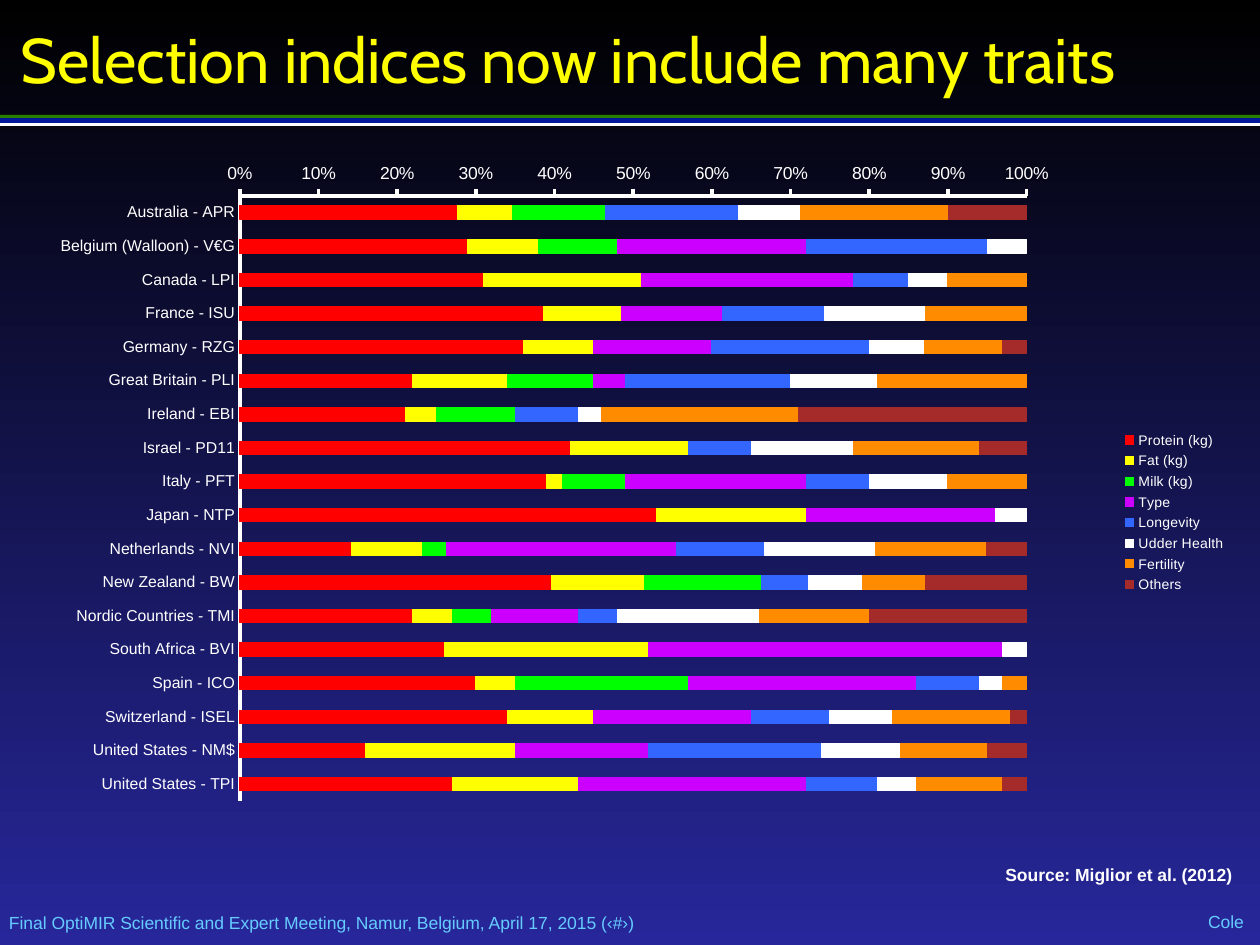
import pptx
import pptx.chart.data
import pptx.dml.color
import pptx.enum.chart
import pptx.enum.shapes
import pptx.enum.text
import pptx.oxml
import pptx.oxml.ns
import pptx.util
from dataclasses import dataclass

TITLE = "Selection indices now include many traits"
SOURCE = "Source: Miglior et al. (2012)"
FOOTER = "Final OptiMIR Scientific and Expert Meeting, Namur, Belgium, April 17, 2015 (‹#›)"
AUTHOR = "Cole"

TRAITS = [
    ("Protein (kg)", "FF0000"),
    ("Fat (kg)", "FFFF00"),
    ("Milk (kg)", "00FF00"),
    ("Type", "CC00FF"),
    ("Longevity", "3366FF"),
    ("Udder Health", "FFFFFF"),
    ("Fertility", "FF8C00"),
    ("Others", "A52A2A"),
]
# Weight of each trait, in the order of TRAITS
INDICES = [
    ("Australia - APR", (28, 7, 12, None, 17, 8, 19, 10)),
    ("Belgium (Walloon) - V€G", (29, 9, 10, 24, 23, 5, None, None)),
    ("Canada - LPI", (31, 20, None, 27, 7, 5, 10, None)),
    ("France - ISU", (39, 10, None, 13, 13, 13, 13, None)),
    ("Germany - RZG", (36, 9, None, 15, 20, 7, 10, 3)),
    ("Great Britain - PLI", (22, 12, 11, 4, 21, 11, 19, None)),
    ("Ireland - EBI", (21, 4, 10, None, 8, 3, 25, 29)),
    ("Israel - PD11", (42, 15, None, None, 8, 13, 16, 6)),
    ("Italy - PFT", (39, 2, 8, 23, 8, 10, 10, None)),
    ("Japan - NTP", (53, 19, None, 24, None, 4, None, None)),
    ("Netherlands - NVI", (14, 9, 3, 29, 11, 14, 14, 5)),
    ("New Zealand - BW", (40, 12, 15, None, 6, 7, 8, 13)),
    ("Nordic Countries - TMI", (22, 5, 5, 11, 5, 18, 14, 20)),
    ("South Africa - BVI", (26, 26, None, 45, None, 3, None, None)),
    ("Spain - ICO", (30, 5, 22, 29, 8, 3, 3, None)),
    ("Switzerland - ISEL", (34, 11, None, 20, 10, 8, 15, 2)),
    ("United States - NM$", (16, 19, None, 17, 22, 10, 11, 5)),
    ("United States - TPI", (27, 16, None, 29, 9, 5, 11, 3)),
]
# top, height, colour of the bands under the title
STRIPES = [(115, 4, "2A7E00"), (122, 4, "FFFFFF"), (118, 5, "001799")]
PLOT_AREA = {"x": 0.2, "y": 0.04, "w": 0.63, "h": 0.88}


@dataclass(frozen=True)
class Theme:
    top: str = "000000"
    bottom: str = "27279B"
    title: str = "FFFF00"
    text: str = "FFFFFF"
    footer: str = "66CCFF"
    heading_font: str = "Cabin"
    body_font: str = "Arial"
    title_size: int = 36
    body_size: int = 10
    category_size: int = 9
    legend_size: int = 8


THEME = Theme()
ALIGN = pptx.enum.text.PP_ALIGN
ANCHOR = pptx.enum.text.MSO_ANCHOR


def px(*lengths):
    """Turn px, at 126 to the inch, into a list of EMU."""
    return [pptx.util.Emu(round(length * 914400 / 126)) for length in lengths]


def rgb(colour):
    return pptx.dml.color.RGBColor.from_string(colour)


def style_font(font, size, colour, name=THEME.body_font, bold=False):
    font.size = pptx.util.Pt(size)
    font.color.rgb = rgb(colour)
    font.name = name
    font.bold = bold


def add_text(slide, box, text, size, colour, name=THEME.body_font, bold=False,
             align=ALIGN.LEFT, anchor=ANCHOR.MIDDLE, inset=0, before=0, wrap=True):
    frame = slide.shapes.add_textbox(*px(*box)).text_frame
    frame.word_wrap = wrap
    frame.vertical_anchor = anchor
    margin, = px(inset)
    frame.margin_left = frame.margin_right = margin
    frame.margin_top = frame.margin_bottom = margin
    paragraph = frame.paragraphs[0]
    paragraph.alignment = align
    paragraph.space_before = pptx.util.Pt(before)
    run = paragraph.add_run()
    run.text = text
    style_font(run.font, size, colour, name, bold)


def paint_background(slide):
    fill = slide.background.fill
    fill.gradient()
    fill.gradient_angle = 270
    for stop, position, colour in zip(fill.gradient_stops, (0, 1), (THEME.top, THEME.bottom)):
        stop.position = position
        stop.color.rgb = rgb(colour)


def add_stripes(slide):
    for top, height, colour in STRIPES:
        stripe = slide.shapes.add_shape(
            pptx.enum.shapes.MSO_SHAPE.RECTANGLE, *px(0, top, 1260, height))
        stripe.shadow.inherit = False
        stripe.fill.solid()
        stripe.fill.fore_color.rgb = rgb(colour)
        stripe.line.fill.background()


def place_plot_area(chart):
    """Fix the inner plot area as fractions of the chart."""
    plot_area = chart._chartSpace.chart.plotArea
    for layout in plot_area.findall(pptx.oxml.ns.qn("c:layout")):
        plot_area.remove(layout)
    parts = "".join(f'<c:{key}Mode val="edge"/>' for key in "xy")
    parts += "".join(f'<c:{key} val="{value}"/>' for key, value in PLOT_AREA.items())
    plot_area.insert(0, pptx.oxml.parse_xml(
        f'<c:layout {pptx.oxml.ns.nsdecls("c")}><c:manualLayout>'
        f'<c:layoutTarget val="inner"/>{parts}</c:manualLayout></c:layout>'))


def style_axis(axis, size, tick):
    axis.has_major_gridlines = False
    axis.major_tick_mark = tick
    axis.minor_tick_mark = pptx.enum.chart.XL_TICK_MARK.NONE
    axis.format.line.color.rgb = rgb(THEME.text)
    axis.format.line.width = pptx.util.Pt(2)
    style_font(axis.tick_labels.font, size, THEME.text)


def add_index_chart(slide):
    data = pptx.chart.data.CategoryChartData()
    data.categories = [name for name, weights in INDICES]
    columns = zip(*(weights for name, weights in INDICES))
    for (trait, colour), values in zip(TRAITS, columns):
        data.add_series(trait, values)
    chart = slide.shapes.add_chart(
        pptx.enum.chart.XL_CHART_TYPE.BAR_STACKED_100, *px(-10, 164, 1249, 692), data).chart
    chart.has_title = False
    style_font(chart.font, THEME.body_size, THEME.text)
    place_plot_area(chart)

    plot = chart.plots[0]
    plot.gap_width = 150
    plot.overlap = 100
    plot.vary_by_categories = False
    for series, (trait, colour) in zip(plot.series, TRAITS):
        series.invert_if_negative = False
        series.format.fill.solid()
        series.format.fill.fore_color.rgb = rgb(colour)
        series.format.line.color.rgb = rgb(colour)
        series.format.line.width = pptx.util.Pt(0.5)

    ticks = pptx.enum.chart.XL_TICK_MARK
    style_axis(chart.category_axis, THEME.category_size, ticks.NONE)
    style_axis(chart.value_axis, THEME.body_size, ticks.OUTSIDE)
    chart.category_axis.reverse_order = True
    chart.category_axis.crosses = pptx.enum.chart.XL_AXIS_CROSSES.MAXIMUM
    chart.value_axis.tick_labels.number_format = "0%"
    chart.value_axis.tick_labels.number_format_is_linked = False

    chart.has_legend = True
    chart.legend.position = pptx.enum.chart.XL_LEGEND_POSITION.RIGHT
    chart.legend.include_in_layout = False
    style_font(chart.legend.font, THEME.legend_size, THEME.text)


def main():
    presentation = pptx.Presentation()
    presentation.slide_width, presentation.slide_height = px(1260, 945)
    slide = presentation.slides.add_slide(presentation.slide_layouts[6])
    paint_background(slide)
    add_text(slide, (9, 912, 1019, 21), FOOTER, THEME.body_size, THEME.footer, before=6)
    add_text(slide, (1207, 912, 38, 19), AUTHOR, THEME.body_size, THEME.footer,
             align=ALIGN.CENTER, before=6, wrap=False)
    add_stripes(slide)
    add_text(slide, (723, 858, 515, 34), SOURCE, THEME.body_size, THEME.text, bold=True,
             align=ALIGN.RIGHT, anchor=ANCHOR.TOP, inset=6)
    add_text(slide, (21, 14, 1217, 88), TITLE, THEME.title_size, THEME.title,
             name=THEME.heading_font)
    add_index_chart(slide)
    presentation.save("out.pptx")


if __name__ == "__main__":
    main()
